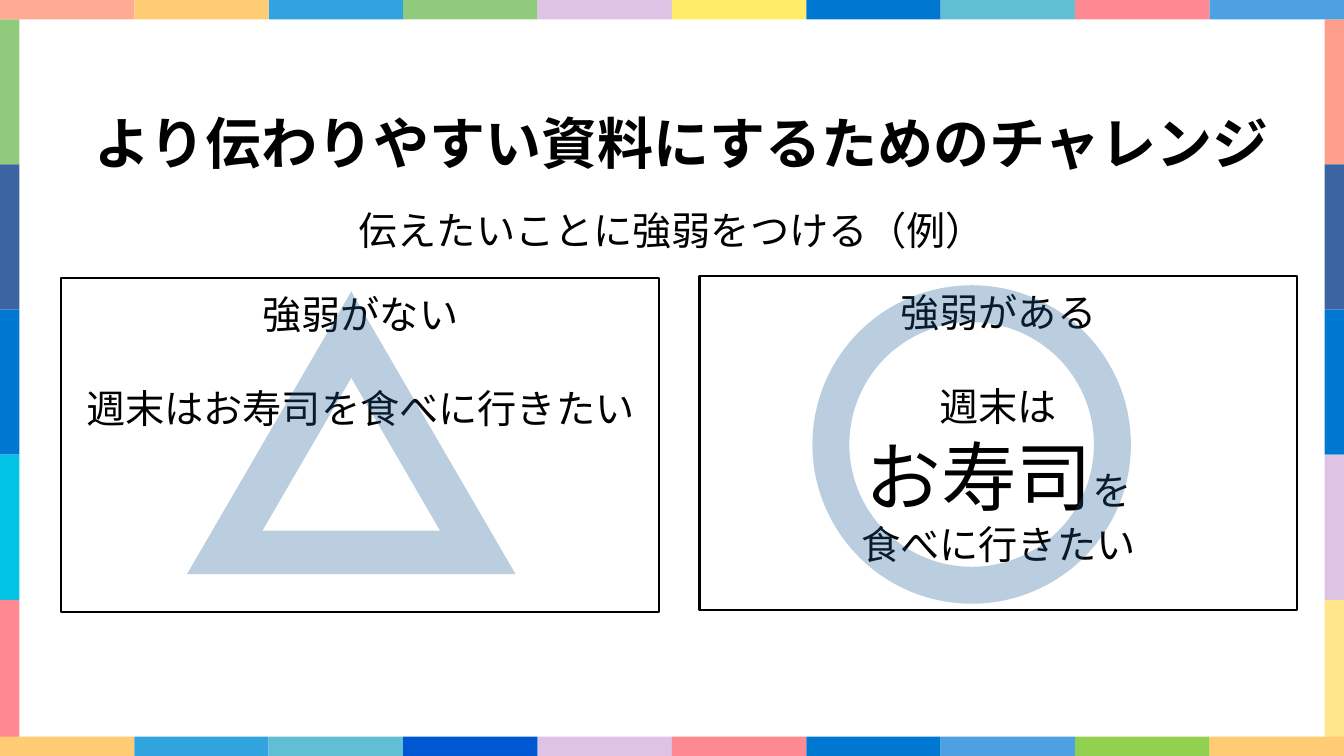
from lxml import etree
from pptx import Presentation
from pptx.dml.color import RGBColor
from pptx.enum.shapes import MSO_SHAPE
from pptx.enum.text import MSO_ANCHOR, PP_ALIGN
from pptx.oxml.ns import qn
from pptx.util import Inches, Pt

RECTANGLE, DONUT, TRIANGLE = MSO_SHAPE.RECTANGLE, MSO_SHAPE.DONUT, MSO_SHAPE.ISOSCELES_TRIANGLE
TOP, MIDDLE = MSO_ANCHOR.TOP, MSO_ANCHOR.MIDDLE
CENTER = PP_ALIGN.CENTER

BLACK = RGBColor(0x00, 0x00, 0x00)
WHITE = RGBColor(0xFF, 0xFF, 0xFF)
NAVY = RGBColor(0x21, 0x5F, 0x9A)
SALMON = RGBColor(0xFF, 0xAA, 0x93)
CORAL = RGBColor(0xFF, 0x9E, 0x8B)
PINK = RGBColor(0xFF, 0x89, 0x93)
ORANGE = RGBColor(0xFF, 0xCB, 0x73)
YELLOW = RGBColor(0xFF, 0xEC, 0x68)
CREAM = RGBColor(0xFF, 0xE6, 0x8C)
GREEN = RGBColor(0x90, 0xCA, 0x7C)
LIME = RGBColor(0x92, 0xD0, 0x50)
LILAC = RGBColor(0xDE, 0xC3, 0xE5)
TEAL = RGBColor(0x61, 0xBF, 0xD4)
CYAN = RGBColor(0x00, 0xC3, 0xE5)
SKY = RGBColor(0x31, 0xA4, 0xDF)
SOFT_BLUE = RGBColor(0x4D, 0xA0, 0xE1)
BLUE = RGBColor(0x00, 0x78, 0xD2)
ROYAL = RGBColor(0x00, 0x57, 0xD3)
INDIGO = RGBColor(0x3C, 0x64, 0xA3)

COLUMNS, ROWS = 160, 90
STRIP = 2.3
TILE_WIDTH, TILE_HEIGHT = 16, 17.28
PANEL_WIDTH, PANEL_HEIGHT = 71.16, 39.72

TOP_TILES = [SALMON, ORANGE, SKY, GREEN, LILAC, YELLOW, BLUE, TEAL, PINK, SOFT_BLUE]
BOTTOM_TILES = [ORANGE, SKY, TEAL, ROYAL, LILAC, PINK, BLUE, SOFT_BLUE, LIME, ORANGE]
LEFT_TILES = [GREEN, INDIGO, BLUE, CYAN, PINK]
RIGHT_TILES = [CORAL, INDIGO, BLUE, LILAC, CREAM]


class Slide:
    body_font = "Lato"
    title_font = "Noto Sans CJK JP"
    body_size = 28
    title_size = 40
    section_gap = 33.6
    insets = (0.1, 0.12, 0.1, 0.05)

    def __init__(self, deck):
        self.column = deck.slide_width / COLUMNS
        self.row = deck.slide_height / ROWS
        self.page = deck.slides.add_slide(deck.slide_layouts[6])

    def place(self, left, top, width, height):
        return (round(left * self.column), round(top * self.row),
                round(width * self.column), round(height * self.row))

    def shape(self, kind, area, fill=None, line=None, weight=1.5):
        shape = self.page.shapes.add_shape(kind, *self.place(*area))
        shape.shadow.inherit = False
        if fill is None:
            shape.fill.background()
        else:
            shape.fill.solid()
            shape.fill.fore_color.rgb = fill
        if line is None:
            shape.line.fill.background()
        else:
            shape.line.color.rgb = line
            shape.line.width = Pt(weight)
        return shape

    def see_through(self, shape, percent):
        for color in shape._element.spPr.iter(qn("a:srgbClr")):
            etree.SubElement(color, qn("a:alpha"), val=str(percent * 1000))

    def set_lines(self, box, lines, anchor=TOP, font=None, size=None, bold=False, insets=insets):
        frame = box.text_frame
        frame.word_wrap = True
        frame.vertical_anchor = anchor
        frame.margin_left, frame.margin_top, frame.margin_right, frame.margin_bottom = map(Inches, insets)
        for index, spans in enumerate(lines):
            para = frame.paragraphs[0] if index == 0 else frame.add_paragraph()
            para.alignment = CENTER
            if index == 1:
                para.space_before = Pt(self.section_gap)
            para.font.name = font or self.body_font
            para.font.size = Pt(size or self.body_size)
            para.font.bold = bold
            para.font.color.rgb = BLACK
            style = para._p.pPr.find(qn("a:defRPr"))
            etree.SubElement(style, qn("a:ea"), typeface=self.body_font)
            for text, span_size in spans:
                span = para.add_run()
                span.text = text
                if span_size:
                    span.font.size = Pt(span_size)

    def text(self, area, text, **style):
        box = self.page.shapes.add_textbox(*self.place(*area))
        self.set_lines(box, [[(text, None)]], **style)

    def panel(self, left, top, lines):
        box = self.shape(RECTANGLE, (left, top, PANEL_WIDTH, PANEL_HEIGHT), WHITE, BLACK)
        self.set_lines(box, lines)

    def frame(self):
        for left, colors in ((0, LEFT_TILES), (COLUMNS - STRIP, RIGHT_TILES)):
            for index, color in enumerate(colors):
                self.shape(RECTANGLE, (left, STRIP + index * TILE_HEIGHT, STRIP, TILE_HEIGHT), color)
        for top, colors in ((0, TOP_TILES), (ROWS - STRIP, BOTTOM_TILES)):
            for index, color in enumerate(colors):
                self.shape(RECTANGLE, (index * TILE_WIDTH, top, TILE_WIDTH, STRIP), color)

    def circle_mark(self, area):
        mark = self.shape(DONUT, area, NAVY)
        mark.adjustments[0] = 0.116
        self.see_through(mark, 30)

    def triangle_mark(self, area):
        mark = self.shape(TRIANGLE, area, line=NAVY, weight=31)
        etree.SubElement(mark.line._get_or_add_ln(), qn("a:miter"), lim="800000")
        self.see_through(mark, 30)


def main():
    deck = Presentation()
    deck.slide_width, deck.slide_height = Inches(13.33), Inches(7.5)
    slide = Slide(deck)
    slide.frame()
    slide.text((26.76, 18.96, 106.44, 15.96), "伝えたいことに強弱をつける（例）", anchor=MIDDLE)
    slide.panel(7.32, 33.12, [
        [("強弱がない", None)],
        [("週末はお寿司を食べに行きたい", None)],
    ])
    slide.panel(83.28, 32.88, [
        [("強弱がある", None)],
        [("週末は", None)],
        [("お寿司", 54), ("を", 28)],
        [("食べに行きたい", None)],
    ])
    slide.circle_mark((96.72, 33.96, 37.92, 37.92))
    slide.triangle_mark((26.76, 39.84, 30.12, 25.92))
    slide.text((9.84, 12.36, 142.68, 9.24), "より伝わりやすい資料にするためのチャレンジ",
               font=slide.title_font, size=slide.title_size, bold=True,
               insets=(0.1, 0.05, 0.1, 0.05))
    deck.save("out.pptx")


if __name__ == "__main__":
    main()
